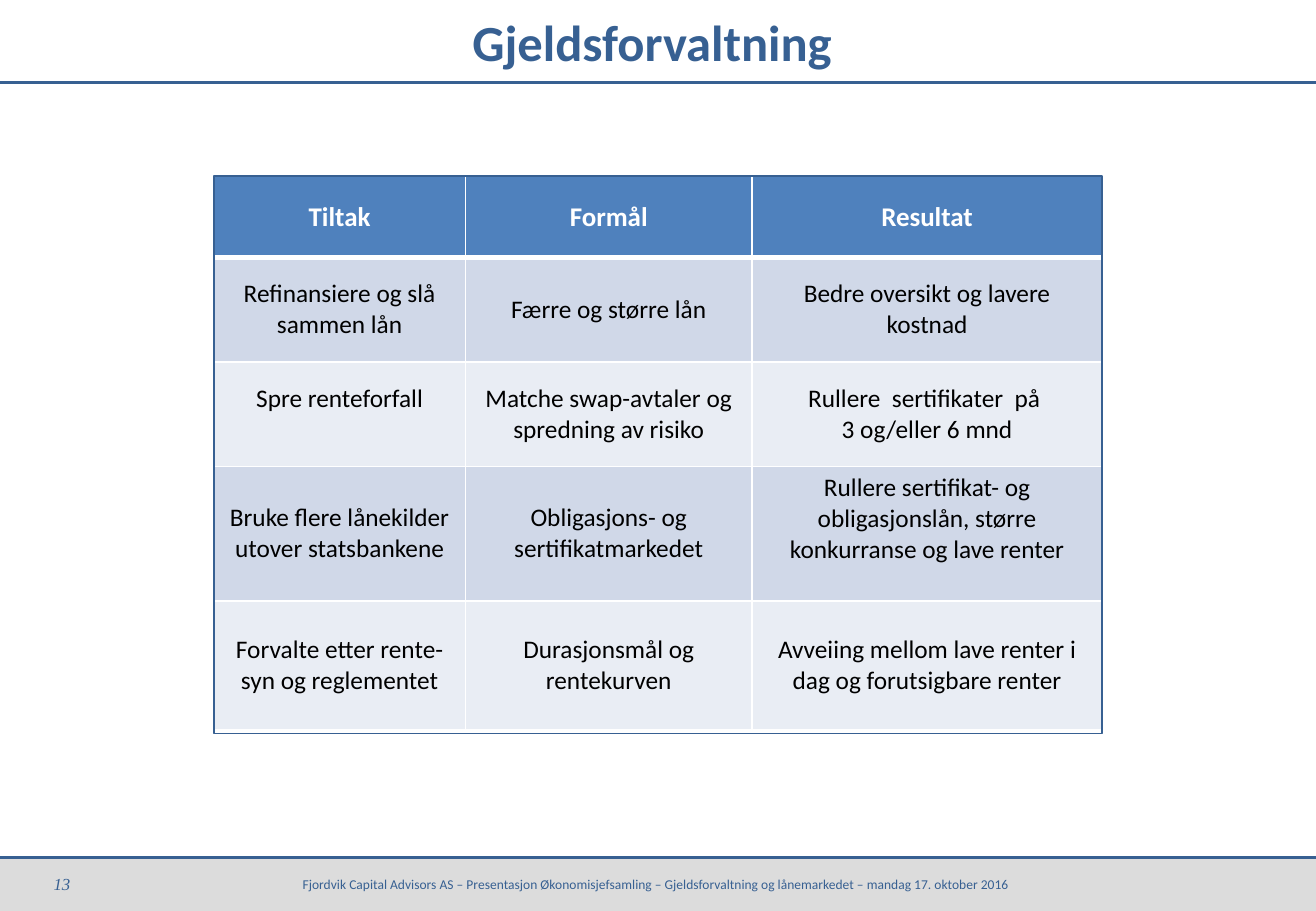
from dataclasses import dataclass

from lxml.etree import SubElement
from pptx import Presentation
from pptx.dml.color import RGBColor
from pptx.enum.shapes import MSO_CONNECTOR, MSO_SHAPE
from pptx.enum.text import MSO_ANCHOR, MSO_AUTO_SIZE, PP_ALIGN
from pptx.oxml.ns import qn
from pptx.slide import Slide
from pptx.table import _Cell as Cell
from pptx.text.text import TextFrame
from pptx.util import Inches, Pt

NAVY = RGBColor(0x37, 0x60, 0x92)
HEADER_BLUE = RGBColor(0x4F, 0x81, 0xBD)
BAND_DARK = RGBColor(0xD0, 0xD8, 0xE8)
BAND_LIGHT = RGBColor(0xE9, 0xED, 0xF4)
FOOTER_GREY = RGBColor(0xA6, 0xA6, 0xA6)
WHITE = RGBColor(0xFF, 0xFF, 0xFF)
BLACK = RGBColor(0, 0, 0)

SLIDE_WIDTH, SLIDE_HEIGHT = 10.83, 7.5
TITLE_HEIGHT = 0.68
FOOTER_TOP = 7.06
FOOTER_HEIGHT = SLIDE_HEIGHT - FOOTER_TOP
TABLE_BOX = (1.76, 1.45, 7.31, 4.59)
COLUMN_WIDTHS = (2.07, 2.36, 2.88)
CELL_MARGIN = 0.05
LINE_HEIGHT = 0.25


@dataclass(frozen=True)
class TextStyle:
    size: float
    color: RGBColor
    bold: bool = False
    italic: bool = False
    font: str = "Calibri"


@dataclass(frozen=True)
class TableRow:
    height: float
    texts: tuple[str, str, str]
    raised_column: int | None = None  # column whose text sits half a line higher


TITLE_STYLE = TextStyle(30, NAVY, bold=True)
FOOTER_STYLE = TextStyle(8, NAVY)
NUMBER_STYLE = TextStyle(10, NAVY, italic=True, font="Times New Roman")
HEADER_STYLE = TextStyle(16, WHITE, bold=True)
BODY_STYLE = TextStyle(15, BLACK)

FOOTER_TEXT = (
    "Fjordvik Capital Advisors AS – Presentasjon Økonomisjefsamling – "
    "Gjeldsforvaltning og lånemarkedet – mandag 17. oktober 2016 "
)
ROWS = (
    TableRow(0.67, ("Tiltak", "Formål", "Resultat")),
    TableRow(0.86, (
        "Refinansiere og slå sammen lån",
        "Færre og større lån",
        "Bedre oversikt og lavere kostnad",
    )),
    TableRow(0.86, (
        "Spre renteforfall",
        "Matche swap-avtaler og spredning av risiko",
        "Rullere  sertifikater  på \n3 og/eller 6 mnd",
    ), raised_column=0),
    TableRow(1.11, (
        "Bruke flere lånekilder utover statsbankene",
        "Obligasjons- og sertifikatmarkedet",
        "Rullere sertifikat- og obligasjonslån, større konkurranse og lave renter",
    ), raised_column=2),
    TableRow(1.06, (
        "Forvalte etter rente-syn og reglementet",
        "Durasjonsmål og rentekurven",
        "Avveiing mellom lave renter i dag og forutsigbare renter",
    )),
)


def write_text(frame: TextFrame, text: str, style: TextStyle) -> None:
    frame.text = text
    frame.word_wrap = True
    for paragraph in frame.paragraphs:
        paragraph.alignment = PP_ALIGN.CENTER
        for run in paragraph.runs:
            run.font.name = style.font
            run.font.size = Pt(style.size)
            run.font.bold = style.bold
            run.font.italic = style.italic
            run.font.color.rgb = style.color


def add_title(slide: Slide) -> None:
    title = slide.shapes.title
    title.left, title.top = Inches(0), Inches(0)
    title.width, title.height = Inches(SLIDE_WIDTH), Inches(TITLE_HEIGHT)
    write_text(title.text_frame, "Gjeldsforvaltning ", TITLE_STYLE)
    title.text_frame.auto_size = MSO_AUTO_SIZE.NONE
    title.text_frame.vertical_anchor = MSO_ANCHOR.MIDDLE


def add_rule(slide: Slide, top: float) -> None:
    """Draw a horizontal line across the whole slide."""
    rule = slide.shapes.add_connector(
        MSO_CONNECTOR.STRAIGHT, Inches(0), Inches(top), Inches(SLIDE_WIDTH), Inches(top)
    )
    rule.line.color.rgb = NAVY
    rule.line.width = Pt(1.5)
    SubElement(rule._element.spPr, qn("a:effectLst"))


def add_footer(slide: Slide) -> None:
    band = slide.shapes.add_shape(
        MSO_SHAPE.RECTANGLE, Inches(0), Inches(FOOTER_TOP),
        Inches(SLIDE_WIDTH), Inches(FOOTER_HEIGHT),
    )
    band.shadow.inherit = False
    band.fill.solid()
    band.fill.fore_color.rgb = FOOTER_GREY
    color = band._element.spPr.find(qn("a:solidFill"))[0]
    SubElement(color, qn("a:alpha"), val="39000")
    band.line.fill.background()
    write_text(band.text_frame, FOOTER_TEXT, FOOTER_STYLE)
    band.text_frame.vertical_anchor = MSO_ANCHOR.MIDDLE


def add_slide_number(slide: Slide) -> None:
    number = slide.shapes.add_textbox(
        Inches(0), Inches(FOOTER_TOP), Inches(1.02), Inches(FOOTER_HEIGHT)
    )
    write_text(number.text_frame, "13", NUMBER_STYLE)
    number.text_frame.vertical_anchor = MSO_ANCHOR.MIDDLE


def set_borders(cell: Cell, top: float, bottom: float) -> None:
    """Give the cell white borders, with 1 pt sides."""
    properties = cell._tc.get_or_add_tcPr()
    for side, width in (("L", 1), ("R", 1), ("T", top), ("B", bottom)):
        border = SubElement(properties, qn(f"a:ln{side}"), w=str(Pt(width)))
        fill = SubElement(border, qn("a:solidFill"))
        SubElement(fill, qn("a:srgbClr"), val=str(WHITE))


def add_measures_table(slide: Slide) -> None:
    table = slide.shapes.add_table(
        len(ROWS), len(COLUMN_WIDTHS), *map(Inches, TABLE_BOX)
    ).table
    for column, width in zip(table.columns, COLUMN_WIDTHS):
        column.width = Inches(width)
    for row_index, row in enumerate(ROWS):
        table.rows[row_index].height = Inches(row.height)
        is_header = row_index == 0
        band_color = BAND_DARK if row_index % 2 else BAND_LIGHT
        for column_index, text in enumerate(row.texts):
            cell = table.cell(row_index, column_index)
            write_text(cell.text_frame, text, HEADER_STYLE if is_header else BODY_STYLE)
            cell.vertical_anchor = MSO_ANCHOR.MIDDLE
            if column_index == row.raised_column:
                cell.margin_bottom = Inches(CELL_MARGIN + LINE_HEIGHT)
            set_borders(cell, top=3 if row_index == 1 else 1, bottom=3 if is_header else 1)
            cell.fill.solid()
            cell.fill.fore_color.rgb = HEADER_BLUE if is_header else band_color


def add_table_frame(slide: Slide) -> None:
    frame = slide.shapes.add_shape(MSO_SHAPE.RECTANGLE, *map(Inches, TABLE_BOX))
    frame.shadow.inherit = False
    frame.fill.background()
    frame.line.color.rgb = NAVY
    frame.line.width = Pt(1)


def main() -> None:
    presentation = Presentation()
    presentation.slide_width = Inches(SLIDE_WIDTH)
    presentation.slide_height = Inches(SLIDE_HEIGHT)
    slide = presentation.slides.add_slide(presentation.slide_layouts.get_by_name("Title Only"))
    add_footer(slide)
    for top in (TITLE_HEIGHT, FOOTER_TOP):
        add_rule(slide, top)
    add_slide_number(slide)
    add_measures_table(slide)
    add_title(slide)
    add_table_frame(slide)
    presentation.save("out.pptx")


if __name__ == "__main__":
    main()
